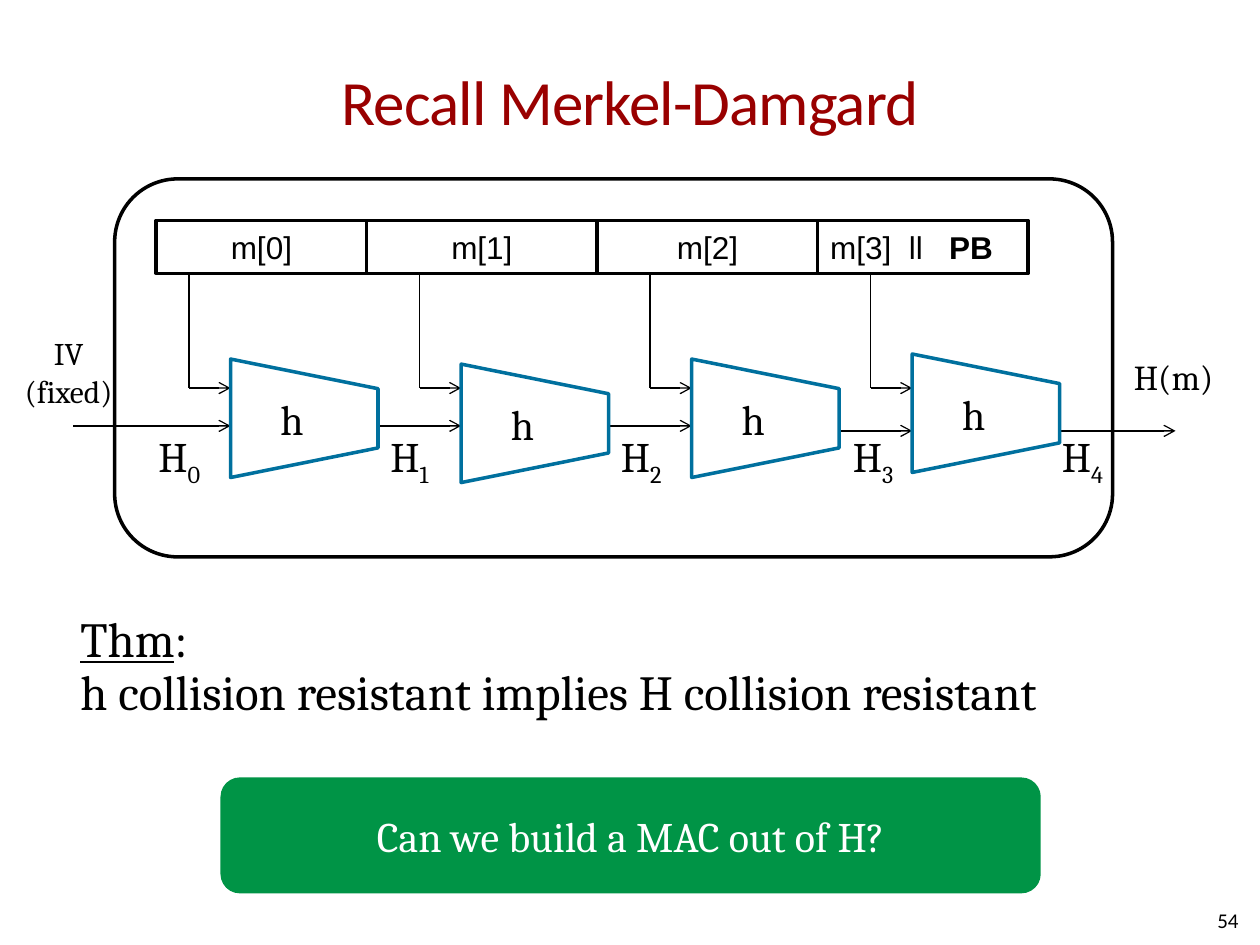
from lxml import etree
from pptx import Presentation
from pptx import util as u
from pptx.dml.color import RGBColor
from pptx.enum import shapes, text
from pptx.oxml.ns import qn

COLORS = {"black": "000000", "white": "FFFFFF", "title": "990000",
          "compressor": "00709E", "question": "009446"}
SERIF = "Cambria"
LEFT, CENTER, RIGHT = text.PP_ALIGN.LEFT, text.PP_ALIGN.CENTER, text.PP_ALIGN.RIGHT
SHAPE = shapes.MSO_SHAPE


def rgb(name):
    return RGBColor.from_string(COLORS[name])


def format_text(frame, size, font=SERIF, color="black", align=LEFT, inset=None,
                wrap=False, anchor=text.MSO_ANCHOR.MIDDLE):
    frame.word_wrap = wrap
    frame.vertical_anchor = anchor
    if inset is not None:
        frame.margin_left = frame.margin_right = u.Inches(inset)
        frame.margin_top = frame.margin_bottom = u.Inches(inset)
    for paragraph in frame.paragraphs:
        paragraph.alignment = align
        for run in paragraph.runs:
            run.font.size = u.Pt(size)
            run.font.name = font
            run.font.color.rgb = rgb(color)


def add_label(slide, box, content, size, **style):
    label = slide.shapes.add_textbox(*map(u.Inches, box))
    frame = label.text_frame
    frame.text = content
    format_text(frame, size, **style)
    return frame


def add_block(slide, kind, box, fill="white", line=None):
    block = slide.shapes.add_shape(kind, *map(u.Inches, box))
    block.shadow.inherit = False
    block.fill.solid()
    block.fill.fore_color.rgb = rgb(fill)
    if line:
        block.line.color.rgb = rgb(line)
        block.line.width = u.Pt(2)
    else:
        block.line.fill.background()
    return block


def add_line(slide, start, end, arrow=True):
    wire = slide.shapes.add_connector(shapes.MSO_CONNECTOR.STRAIGHT,
                                      *map(u.Inches, start + end))
    wire.line.color.rgb = rgb("black")
    wire.line.width = u.Pt(0.75)
    if arrow:
        etree.SubElement(wire.line._get_or_add_ln(), qn("a:tailEnd"), type="arrow")
    etree.SubElement(wire._element.spPr, qn("a:effectLst"))


def add_message_blocks(slide):
    left = 1.24
    for content, width in (("m[0]", 1.67), ("m[1]", 1.83), ("m[2]", 1.75),
                           ("m[3]  ll   ", 1.67)):
        block = add_block(slide, SHAPE.RECTANGLE, (left, 1.75, width, 0.42), line="black")
        frame = block.text_frame
        frame.text = content
        padded = content.startswith("m[3]")
        if padded:
            padding = frame.paragraphs[0].add_run()
            padding.text = "PB"
            padding.font.bold = True
        format_text(frame, 18, font="Arial", align=LEFT if padded else CENTER)
        left += width


def add_compressor(slide, left, middle):
    width, height = 0.94, 1.17
    compressor = add_block(slide, SHAPE.TRAPEZOID,
                           (left + (height - width) / 2, middle - height / 2, width, height),
                           line="compressor")
    compressor.rotation = 90
    frame = compressor.text_frame
    frame.text = "h"
    format_text(frame, 24, align=CENTER, inset=0, wrap=True)
    frame._txBody.bodyPr.set("vert", "vert270")


def add_chain_value(slide, left, index):
    frame = add_label(slide, (left, 3.37, 0.56, 0.5), "H", 24, anchor=text.MSO_ANCHOR.TOP)
    subscript = frame.paragraphs[0].add_run()
    subscript.text = str(index)
    format_text(frame, 24, anchor=text.MSO_ANCHOR.TOP)
    subscript.font._element.set("baseline", "-25000")


def add_chain(slide):
    stages = [1.83, 3.66, 5.49, 7.24]
    for stage in stages:
        drop = stage - 0.33
        add_line(slide, (drop, 2.17), (drop, 3.08), arrow=False)
        add_line(slide, (drop, 3.08), (stage, 3.08))
    for start, end, y in ((0.58, 1.83, 3.38), (2.83, 3.66, 3.38), (4.66, 5.49, 3.38),
                          (6.49, 7.24, 3.42), (8.24, 9.33, 3.42)):
        add_line(slide, (start, y), (end, y))
    for index, left in enumerate((1.16, 3, 4.83, 6.67, 8.33)):
        add_chain_value(slide, left, index)
    for stage, middle in zip(stages, (3.32, 3.36, 3.32, 3.28)):
        add_compressor(slide, stage, middle)


def add_theorem(slide):
    frame = add_label(slide, (0.54, 4.83, 8.92, 1.2), "Thm", 28)
    paragraph = frame.paragraphs[0]
    paragraph.line_spacing = 0.9
    paragraph.space_before = u.Pt(3)
    paragraph.runs[0].font.underline = True
    paragraph.add_run().text = ":"
    paragraph.add_line_break()
    paragraph.add_run().text = "h collision resistant implies H collision resistant"
    format_text(frame, 28, wrap=True, anchor=text.MSO_ANCHOR.TOP)


def main():
    deck = Presentation()
    deck.slide_width, deck.slide_height = u.Inches(10), u.Inches(7.5)
    slide = deck.slides.add_slide(deck.slide_layouts[6])

    title = add_label(slide, (0.5, 0.17, 9, 1.25), "Recall Merkel-Damgard", 36,
                      font="Calibri", color="title", align=CENTER, wrap=True)
    title.paragraphs[0].runs[0].font._element.set("spc", "-50")
    add_theorem(slide)

    add_block(slide, SHAPE.ROUNDED_RECTANGLE, (0.91, 1.42, 7.92, 3), line="black")
    add_message_blocks(slide)
    add_label(slide, (0.08, 2.6, 0.93, 0.71), "IV\n(fixed)", 18, align=CENTER,
              anchor=text.MSO_ANCHOR.TOP)
    add_label(slide, (8.9, 2.77, 0.84, 0.44), "H(m)", 20, anchor=text.MSO_ANCHOR.TOP)
    add_chain(slide)

    question = add_block(slide, SHAPE.ROUNDED_RECTANGLE, (1.75, 6.17, 6.51, 0.92),
                         fill="question")
    question.text_frame.text = "Can we build a MAC out of H?"
    format_text(question.text_frame, 24, color="white", align=CENTER, inset=0, wrap=True)
    add_label(slide, (7.5, 7.1, 2.33, 0.4), "54", 12, font="Calibri", align=RIGHT,
              inset=0, wrap=True)
    deck.save("out.pptx")


if __name__ == "__main__":
    main()
